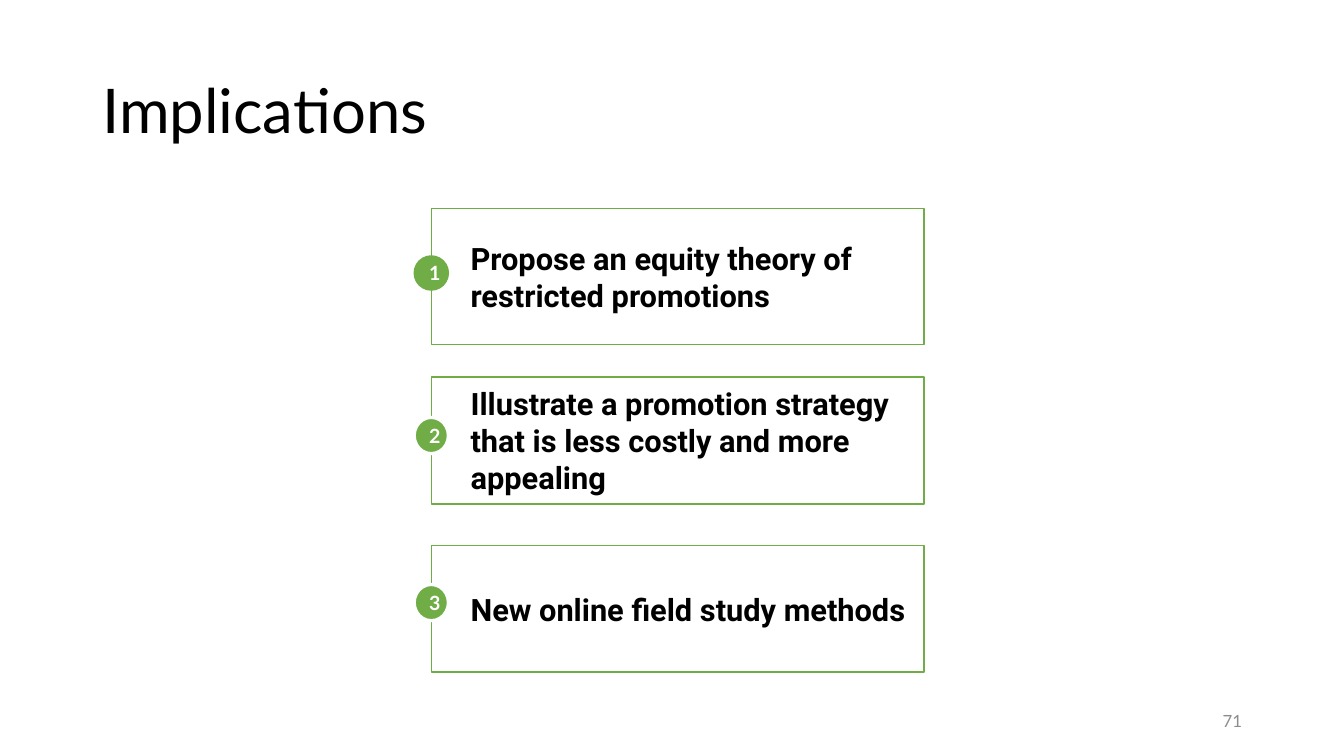
from pptx import Presentation
from pptx.dml.color import RGBColor
from pptx.enum.shapes import MSO_SHAPE as Preset
from pptx.enum.text import MSO_ANCHOR as Anchor, PP_ALIGN as Align
from pptx.util import Cm, Pt

BLACK = RGBColor(0x00, 0x00, 0x00)
WHITE = RGBColor(0xFF, 0xFF, 0xFF)
GREEN = RGBColor(0x70, 0xAD, 0x47)
GRAY = RGBColor(0x8C, 0x8C, 0x8C)

CARD_LEFT, CARD_WIDTH = 10.87, 12.42
FIRST_CARD_TOP, CARD_PITCH = 5.26, 4.24
BADGE_LEFT, BADGE_WIDTH = 10.44, 0.86

# Card text, card height, badge top, badge height, badge line colour and width
IMPLICATIONS = [
    ("Propose an equity theory of restricted promotions",
     3.43, 6.45, 0.86, GREEN, 1),
    ("Illustrate a promotion strategy that is less costly and more appealing",
     3.2, 10.52, 0.91, WHITE, 2.25),
    ("New online field study methods",
     3.2, 14.73, 0.91, WHITE, 2.25),
]


class SlideBuilder:
    heading_font = "Lato"
    card_font = "Roboto"

    def __init__(self, slide):
        self.slide = slide

    def set_text(self, shape, text, font_name, size, color, bold=False, align=Align.LEFT):
        """Put one formatted, vertically centred paragraph into a shape."""
        text_frame = shape.text_frame
        text_frame.text = text
        text_frame.word_wrap = True
        text_frame.vertical_anchor = Anchor.MIDDLE
        paragraph = text_frame.paragraphs[0]
        paragraph.alignment = align
        font = paragraph.runs[0].font
        font.name = font_name
        font.size = Pt(size)
        font.bold = bold
        font.color.rgb = color
        return paragraph

    def add_label(self, text, bounds, size, color, align=Align.LEFT):
        box = self.slide.shapes.add_textbox(*map(Cm, bounds))
        return self.set_text(box, text, self.heading_font, size, color, align=align)

    def add_outlined(self, preset, bounds, fill, line, line_width):
        shape = self.slide.shapes.add_shape(preset, *map(Cm, bounds))
        shape.shadow.inherit = False
        shape.fill.solid()
        shape.fill.fore_color.rgb = fill
        shape.line.color.rgb = line
        shape.line.width = Pt(line_width)
        return shape

    def add_card(self, text, top, height):
        bounds = (CARD_LEFT, top, CARD_WIDTH, height)
        card = self.add_outlined(Preset.RECTANGLE, bounds, WHITE, GREEN, 1)
        card.text_frame.margin_left = Cm(0.99)
        self.set_text(card, text, self.card_font, 22, BLACK, bold=True)

    def add_badge(self, number, top, height, line, line_width):
        bounds = (BADGE_LEFT, top, BADGE_WIDTH, height)
        badge = self.add_outlined(Preset.OVAL, bounds, GREEN, line, line_width)
        self.set_text(badge, str(number), self.heading_font, 14, WHITE,
                      bold=True, align=Align.CENTER)


def main():
    presentation = Presentation()
    presentation.slide_width = Cm(33.87)
    presentation.slide_height = Cm(19.05)
    slide = presentation.slides.add_slide(presentation.slide_layouts[6])
    builder = SlideBuilder(slide)

    title = builder.add_label("Implications", (2.33, 1.02, 29.21, 3.68), 44, BLACK)
    title.line_spacing = 0.9
    builder.add_label("71", (23.93, 17.65, 7.62, 1.02), 12, GRAY, Align.RIGHT)

    for index, (text, height, *badge) in enumerate(IMPLICATIONS):
        builder.add_card(text, FIRST_CARD_TOP + index * CARD_PITCH, height)
        builder.add_badge(index + 1, *badge)

    presentation.save("out.pptx")


if __name__ == "__main__":
    main()
